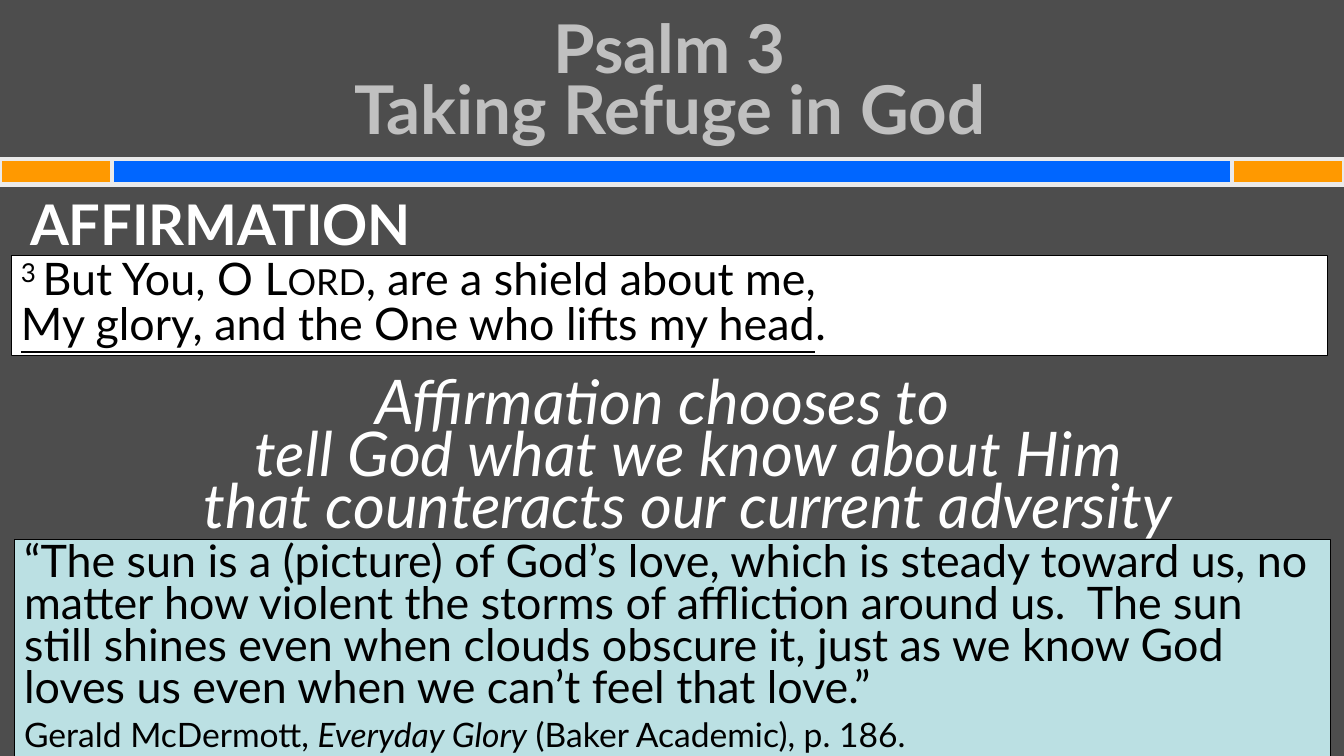
import pptx
import pptx.dml.color
import pptx.enum.shapes
import pptx.enum.text
import pptx.util
from dataclasses import dataclass

Cm = pptx.util.Cm
Pt = pptx.util.Pt
RGB = pptx.dml.color.RGBColor.from_string
ALIGN = pptx.enum.text.PP_ALIGN
ANCHOR = pptx.enum.text.MSO_ANCHOR
RECTANGLE = pptx.enum.shapes.MSO_SHAPE.RECTANGLE


@dataclass(frozen=True)
class Theme:
    font: str = "Lato"
    background: str = "4D4D4D"
    bar: str = "0066FF"
    bar_end: str = "FF9900"
    bar_line: str = "EAEAEA"
    title: str = "C0C0C0"
    light: str = "FFFFFF"
    dark: str = "000000"
    quote: str = "BBE0E3"
    title_size: int = 48
    statement_size: int = 44
    heading_size: int = 40
    reading_size: int = 32
    credit_size: int = 24


theme = Theme()


def add_rectangle(place, fill, line, line_width):
    shape = slide.shapes.add_shape(RECTANGLE, *map(Cm, place))
    shape.shadow.inherit = False
    shape.fill.solid()
    shape.fill.fore_color.rgb = RGB(fill)
    shape.line.color.rgb = RGB(line)
    shape.line.width = Pt(line_width)
    return shape


def add_paragraph(frame, runs, size, color, layout, indent=0, **base_style):
    """Write runs of (text, font values, XML run attributes) as one paragraph."""
    paragraph = frame.paragraphs[0]
    if paragraph.runs:
        paragraph = frame.add_paragraph()
    for name, value in layout.items():
        setattr(paragraph, name, value)
    if indent:
        properties = paragraph._p.get_or_add_pPr()
        properties.set("marL", str(Cm(indent)))
        properties.set("indent", str(-Cm(indent)))
    for text, style, attributes in runs:
        for number, line in enumerate(text.split("\n")):
            if number:
                paragraph.add_line_break()
            run = paragraph.add_run()
            run.text = line
            values = {"name": theme.font, "size": Pt(size), **base_style, **style}
            for name, value in values.items():
                setattr(run.font, name, value)
            run.font.color.rgb = RGB(color)
            for name, value in attributes.items():
                run._r.get_or_add_rPr().set(name, value)


presentation = pptx.Presentation()
presentation.slide_width = Cm(33.87)
presentation.slide_height = Cm(19.05)
slide = presentation.slides.add_slide(presentation.slide_layouts[6])
slide.background.fill.solid()
slide.background.fill.fore_color.rgb = RGB(theme.background)

# Divider bar
end_width = 2.82
for left, width, fill in [
    (0, 33.87, theme.bar),
    (0, end_width, theme.bar_end),
    (33.87 - end_width, end_width, theme.bar_end),
]:
    add_rectangle((left, 4.01, width, 0.64), fill, theme.bar_line, 3)

# Title, and heading with statement
title, body = [
    slide.shapes.add_textbox(Cm(0.51), Cm(top), Cm(32.74), Cm(height)).text_frame
    for top, height in [(0.76, 2.84), (5.11, 13.54)]
]
title.word_wrap = body.word_wrap = True
title.vertical_anchor = ANCHOR.MIDDLE
add_paragraph(
    title, [("Psalm 3\nTaking Refuge in God", {}, {})],
    theme.title_size, theme.title,
    {"alignment": ALIGN.CENTER, "line_spacing": Pt(44)}, bold=True,
)
add_paragraph(
    body, [("AFFIRMATION", {}, {})], theme.heading_size, theme.light,
    {"line_spacing": 0.7}, indent=0.95, bold=True,
)
statement = (
    "Affirmation chooses to \n"
    "tell God what we know about Him\n"
    "that counteracts our current adversity"
)
add_paragraph(
    body, [(statement, {}, {})], theme.statement_size, theme.light,
    {"alignment": ALIGN.CENTER, "line_spacing": 0.7, "space_before": Pt(92)},
    indent=0.95, italic=True,
)

# Verse and quotation
verse, quotation = [
    add_rectangle(place, fill, theme.dark, 0.75).text_frame
    for place, fill in [
        ((0.28, 6.43, 33.17, 2.54), theme.light),
        ((0.36, 13.59, 33.17, 5.59), theme.quote),
    ]
]
for frame in (verse, quotation):
    frame.word_wrap = True
    frame.vertical_anchor = ANCHOR.TOP
    frame.auto_size = pptx.enum.text.MSO_AUTO_SIZE.SHAPE_TO_FIT_TEXT

verse_lines = [
    [
        ("3 ", {}, {"baseline": "30000"}),
        ("But You, O ", {}, {}),
        ("Lord", {}, {"cap": "small"}),
        (", are a shield about me,", {}, {}),
    ],
    [
        ("My glory, and the One who lifts my head", {"underline": True}, {}),
        (".", {}, {}),
    ],
]
for runs in verse_lines:
    add_paragraph(
        verse, runs, theme.reading_size, theme.dark,
        {"alignment": ALIGN.LEFT, "line_spacing": Pt(32)},
    )

quote = (
    "“The sun is a (picture) of God’s love, which is steady toward us, "
    "no matter how violent the storms of affliction around us.  The sun "
    "still shines even when clouds obscure it, just as we know God "
    "loves us even when we can’t feel that love.”"
)
add_paragraph(
    quotation, [(quote, {}, {})], theme.reading_size, theme.dark,
    {"alignment": ALIGN.LEFT, "line_spacing": Pt(30)},
)
credit = [
    ("Gerald McDermott, ", {}, {}),
    ("Everyday Glory", {"italic": True}, {}),
    (" (Baker Academic), p. 186.", {}, {}),
]
add_paragraph(
    quotation, credit, theme.credit_size, theme.dark,
    {"alignment": ALIGN.LEFT, "line_spacing": Pt(24), "space_before": Pt(6)},
)

presentation.save("out.pptx")
